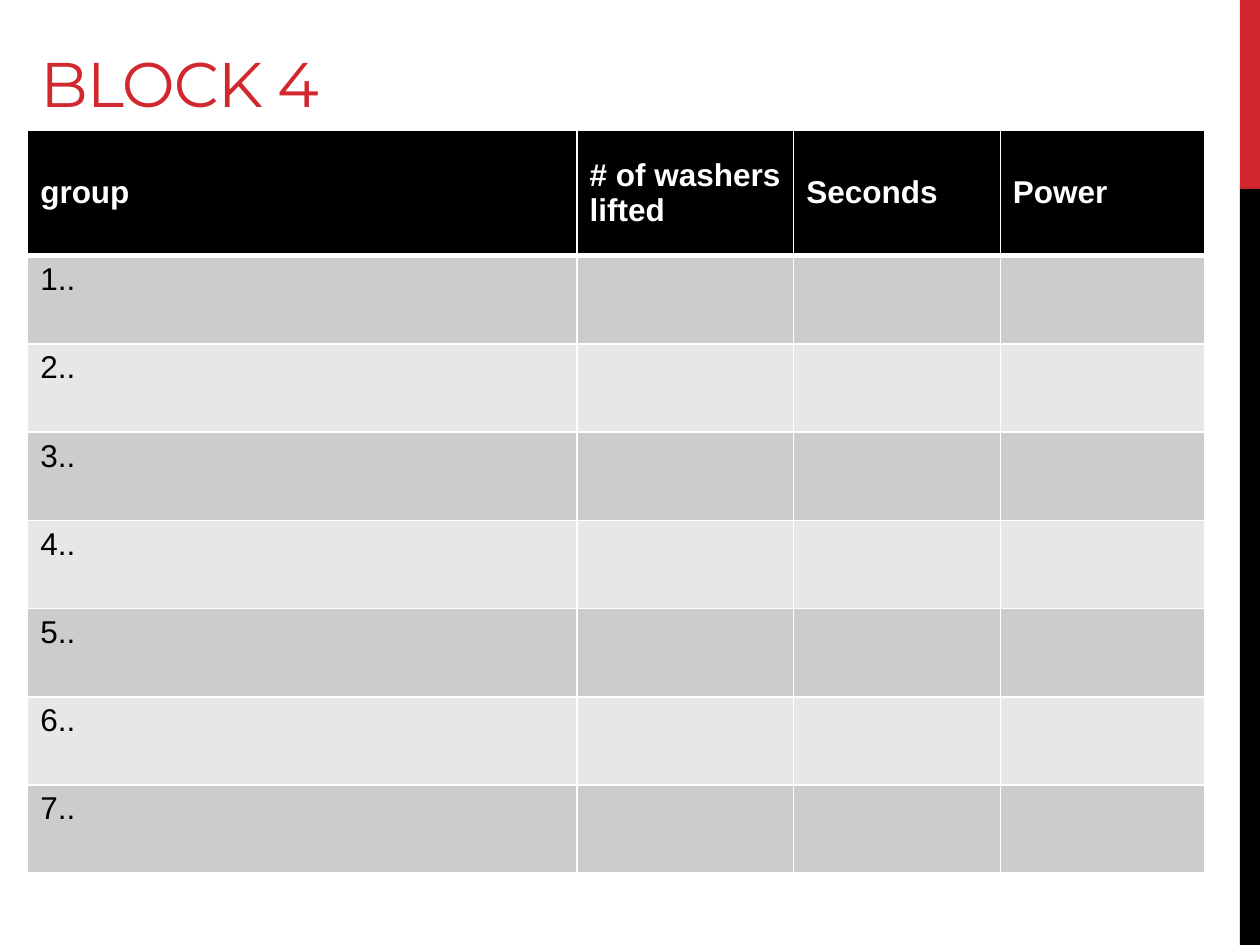
"""Build the Block 4 slide with its table for washers lifted, seconds and power."""
import pptx
import pptx.dml.color
import pptx.enum.shapes
import pptx.enum.text
import pptx.oxml.ns
import pptx.util
from lxml import etree

Pt = pptx.util.Pt
ANCHOR = pptx.enum.text.MSO_ANCHOR
COLORS = {
    "accent": "D1282E",
    "black": "000000",
    "white": "FFFFFF",
    "odd": "CCCCCC",
    "even": "E7E7E7",
}
HEADINGS = ["group", "# of washers lifted", "Seconds", "Power"]
COLUMN_WIDTHS = [313.92, 123.84, 118.08, 116.64]
GROUP_COUNT = 7
HEADER_HEIGHT, ROW_HEIGHT = 72, 50.4


def color(name):
    return pptx.dml.color.RGBColor.from_string(COLORS[name])


def add_bar(page, top, height, fill):
    bar = page.shapes.add_shape(
        pptx.enum.shapes.MSO_SHAPE.RECTANGLE, Pt(708.48), Pt(top), Pt(11.52), Pt(height))
    bar.shadow.inherit = False
    bar.fill.solid()
    bar.fill.fore_color.rgb = color(fill)
    bar.line.fill.background()


def set_font(para, name, size, fill, bold=False):
    para.alignment = pptx.enum.text.PP_ALIGN.LEFT
    para.font.name = name
    para.font.size = Pt(size)
    para.font.bold = bold
    para.font.color.rgb = color(fill)


def set_title(page, text):
    box = page.shapes.title
    box.left, box.top, box.width, box.height = Pt(15.84), Pt(0.72), Pt(455.76), Pt(71.28)
    frame = box.text_frame
    frame.text = text
    frame.auto_size = pptx.enum.text.MSO_AUTO_SIZE.NONE
    frame.vertical_anchor = ANCHOR.BOTTOM
    para = frame.paragraphs[0]
    set_font(para, "Montserrat", 36, "accent")
    para.runs[0].font._element.set("spc", "-60")


def set_borders(cell, widths):
    properties = cell._tc.get_or_add_tcPr()
    for side, width in widths.items():
        line = etree.SubElement(
            properties, pptx.oxml.ns.qn(f"a:ln{side}"), w=str(Pt(width)))
        fill = etree.SubElement(line, pptx.oxml.ns.qn("a:solidFill"))
        etree.SubElement(fill, pptx.oxml.ns.qn("a:srgbClr"), val=COLORS["white"])


def format_cell(cell, row, text):
    header = row == 0
    set_borders(cell, {"L": 1, "R": 1, "T": 3 if row == 1 else 1, "B": 3 if header else 1})
    cell.fill.solid()
    cell.fill.fore_color.rgb = color("black" if header else "odd" if row % 2 else "even")
    cell.vertical_anchor = ANCHOR.MIDDLE if header else ANCHOR.TOP
    cell.text = text
    set_font(cell.text_frame.paragraphs[0], "Arial", 18,
             "white" if header else "black", header)


def add_results_table(page):
    rows = [HEADINGS] + [[f"{number}..", "", "", ""] for number in range(1, GROUP_COUNT + 1)]
    table = page.shapes.add_table(
        len(rows), len(HEADINGS), Pt(15.84), Pt(74.16),
        Pt(sum(COLUMN_WIDTHS)), Pt(HEADER_HEIGHT + GROUP_COUNT * ROW_HEIGHT)).table
    for column, width in zip(table.columns, COLUMN_WIDTHS):
        column.width = Pt(width)
    for row, texts in enumerate(rows):
        table.rows[row].height = Pt(ROW_HEIGHT if row else HEADER_HEIGHT)
        for column, text in enumerate(texts):
            format_cell(table.cell(row, column), row, text)


def main():
    deck = pptx.Presentation()
    deck.slide_width, deck.slide_height = Pt(720), Pt(540)
    page = deck.slides.add_slide(deck.slide_layouts[5])
    add_bar(page, 0, 108, "accent")
    add_bar(page, 108, 432, "black")
    set_title(page, "BLOCK 4")
    add_results_table(page)
    deck.save("out.pptx")


if __name__ == "__main__":
    main()
